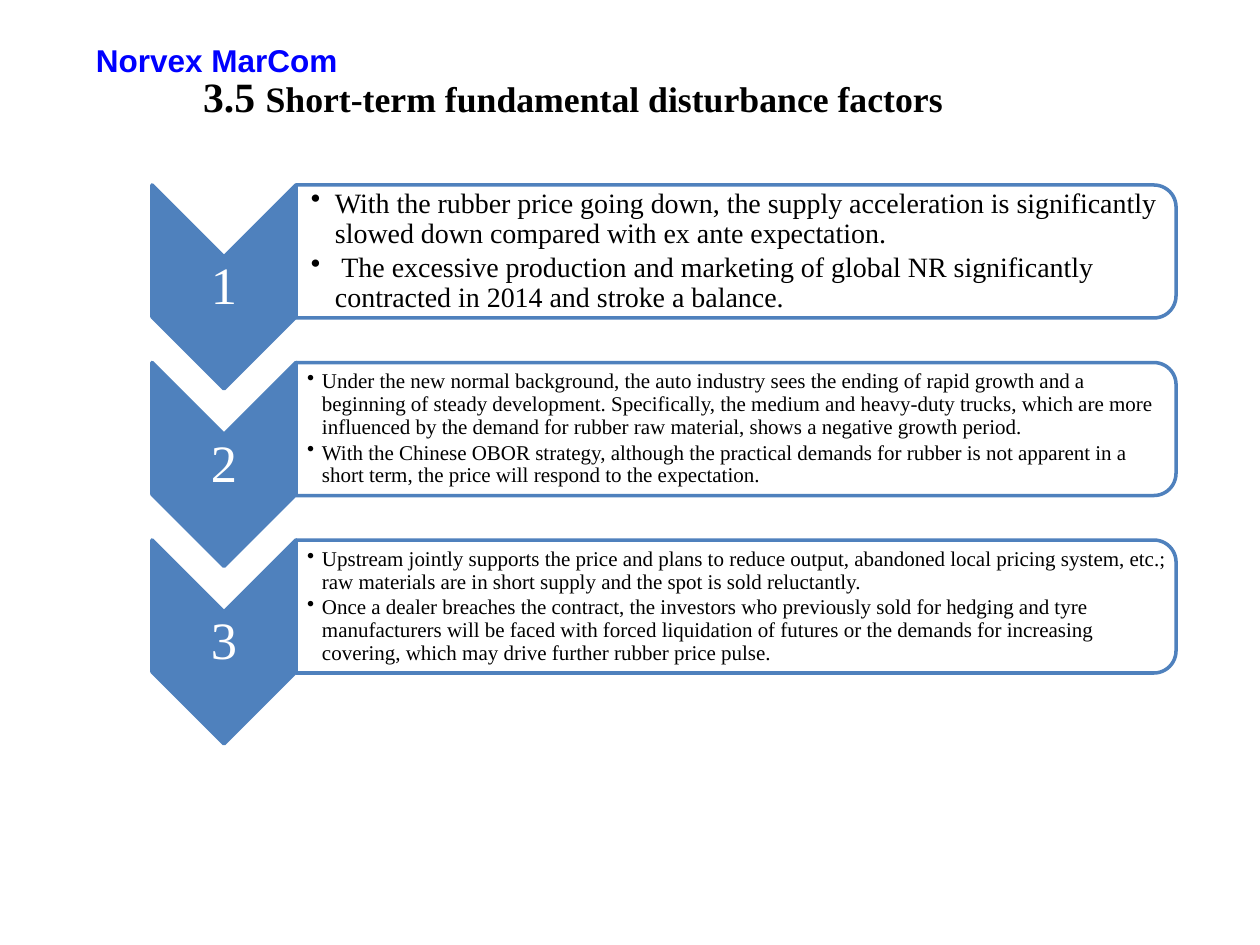
from lxml.etree import SubElement
from pptx import Presentation
from pptx.dml.color import RGBColor
from pptx.enum.shapes import MSO_SHAPE as SHAPE
from pptx.enum.text import MSO_ANCHOR as ANCHOR, PP_ALIGN as ALIGN
from pptx.oxml.ns import qn
from pptx.util import Emu, Pt

# Content
HEADER = "Norvex MarCom"
TITLE = [("3.5 ", 23.8), ("Short-term fundamental disturbance factors", 20.4)]
FACTORS = [
    {"size": 16, "indent": 24, "inset": 15, "points": [
        "With the rubber price going down, the supply acceleration is significantly "
        "slowed down compared with ex ante expectation.",
        " The excessive production and marketing of global NR significantly "
        "contracted in 2014 and stroke a balance."]},
    {"size": 12, "indent": 15, "inset": 11, "points": [
        "Under the new normal background, the auto industry sees the ending of rapid "
        "growth and a beginning of steady development. Specifically, the medium and "
        "heavy-duty trucks, which are more influenced by the demand for rubber raw "
        "material, shows a negative growth period.",
        "With the Chinese OBOR strategy, although the practical demands for rubber is "
        "not apparent in a short term, the price will respond to the expectation."]},
    {"size": 12, "indent": 15, "inset": 11, "points": [
        "Upstream jointly supports the price and plans to reduce output, abandoned "
        "local pricing system, etc.; raw materials are in short supply and the spot "
        "is sold reluctantly.",
        "Once a dealer breaches the contract, the investors who previously sold for "
        "hedging and tyre manufacturers will be faced with forced liquidation of "
        "futures or the demands for increasing covering, which may drive further "
        "rubber price pulse."]},
]
SERIF, SANS = "Times New Roman", "Arial"
BLUE, WHITE, BLACK, HEADER_BLUE = "4F81BD", "FFFFFF", "000000", "0000FF"

# Layout in px
LEFT, TOP, PITCH = 152, 185, 177.5
CHEVRON_W, CHEVRON_H = 144, 204
PANEL_W, PANEL_H = 880, 133


def px(n):
    return Emu(round(n * 914400 / 126))


def rgb(value):
    return RGBColor.from_string(value)


def add_text(slide, box, anchor, insets):
    tf = slide.shapes.add_textbox(*map(px, box)).text_frame
    tf.word_wrap, tf.vertical_anchor = True, anchor
    for side, inset in zip(("left", "top", "right", "bottom"), insets):
        setattr(tf, f"margin_{side}", px(inset))
    return tf


def add_run(p, text, **font):
    r = p.add_run()
    r.text = text
    r.font.color.rgb = rgb(font.pop("color"))
    font["size"] = Pt(font["size"])
    for name, value in font.items():
        setattr(r.font, name, value)


def add_turned(slide, kind, box, fill, alpha=None):
    """Add a preset turned a quarter so that it covers the given box."""
    x, y, w, h = box
    sp = slide.shapes.add_shape(
        kind, px(x + (w - h) / 2), px(y + (h - w) / 2), px(h), px(w))
    sp.rotation = 90
    sp.shadow.inherit = False
    sp.fill.solid()
    sp.fill.fore_color.rgb = rgb(fill)
    sp.line.color.rgb = rgb(BLUE)
    sp.line.width = Pt(2)
    SubElement(sp.line._ln, qn("a:round"))
    if alpha:
        color = sp._element.spPr.find(qn("a:solidFill"))[0]
        SubElement(color, qn("a:alpha"), val=str(alpha * 1000))


def add_bullet(p, indent):
    pPr = p._p.get_or_add_pPr()
    pPr.set("marL", str(px(indent)))
    pPr.set("indent", str(-px(indent)))
    SubElement(pPr, qn("a:buChar"), char="•")


def add_factor(slide, number, factor, y):
    # Numbered chevron
    add_turned(slide, SHAPE.CHEVRON, (LEFT, y, CHEVRON_W, CHEVRON_H), BLUE)
    tf = add_text(slide, (LEFT, y + 72, CHEVRON_W, 62), ANCHOR.MIDDLE, (2, 2, 2, 2))
    p = tf.paragraphs[0]
    p.alignment, p.line_spacing = ALIGN.CENTER, 0.9
    add_run(p, str(number), size=30, name=SERIF, color=WHITE)

    # Panel with its points
    x = LEFT + CHEVRON_W
    add_turned(slide, SHAPE.ROUND_2_SAME_RECTANGLE, (x, y, PANEL_W, PANEL_H), WHITE, 90)
    tf = add_text(slide, (x, y + 6, PANEL_W - 6, PANEL_H - 12), ANCHOR.MIDDLE,
                  (factor["inset"], 1, 1, 1))
    for i, point in enumerate(factor["points"]):
        p = tf.add_paragraph() if i else tf.paragraphs[0]
        p.line_spacing, p.space_after = 0.9, Pt(factor["size"] * 0.15)
        add_bullet(p, factor["indent"])
        add_run(p, point, size=factor["size"], name=SERIF, color=BLACK)


def main():
    prs = Presentation()
    prs.slide_width, prs.slide_height = px(1260), px(945)
    slide = prs.slides.add_slide(prs.slide_layouts[6])

    # Header and title
    p = add_text(slide, (84, 42, 577, 43), ANCHOR.MIDDLE, (12, 6, 12, 6)).paragraphs[0]
    p.line_spacing = 0.8
    add_run(p, HEADER, size=18, name=SANS, color=HEADER_BLUE, bold=True)
    p = add_text(slide, (69, 31, 1008, 90), ANCHOR.BOTTOM, (12, 6, 12, 0)).paragraphs[0]
    p.alignment = ALIGN.CENTER
    for text, size in TITLE:
        add_run(p, text, size=size, name=SERIF, color=BLACK, bold=True)

    # Factors
    for i, factor in enumerate(FACTORS):
        add_factor(slide, i + 1, factor, TOP + i * PITCH)
    prs.save("out.pptx")


if __name__ == "__main__":
    main()
